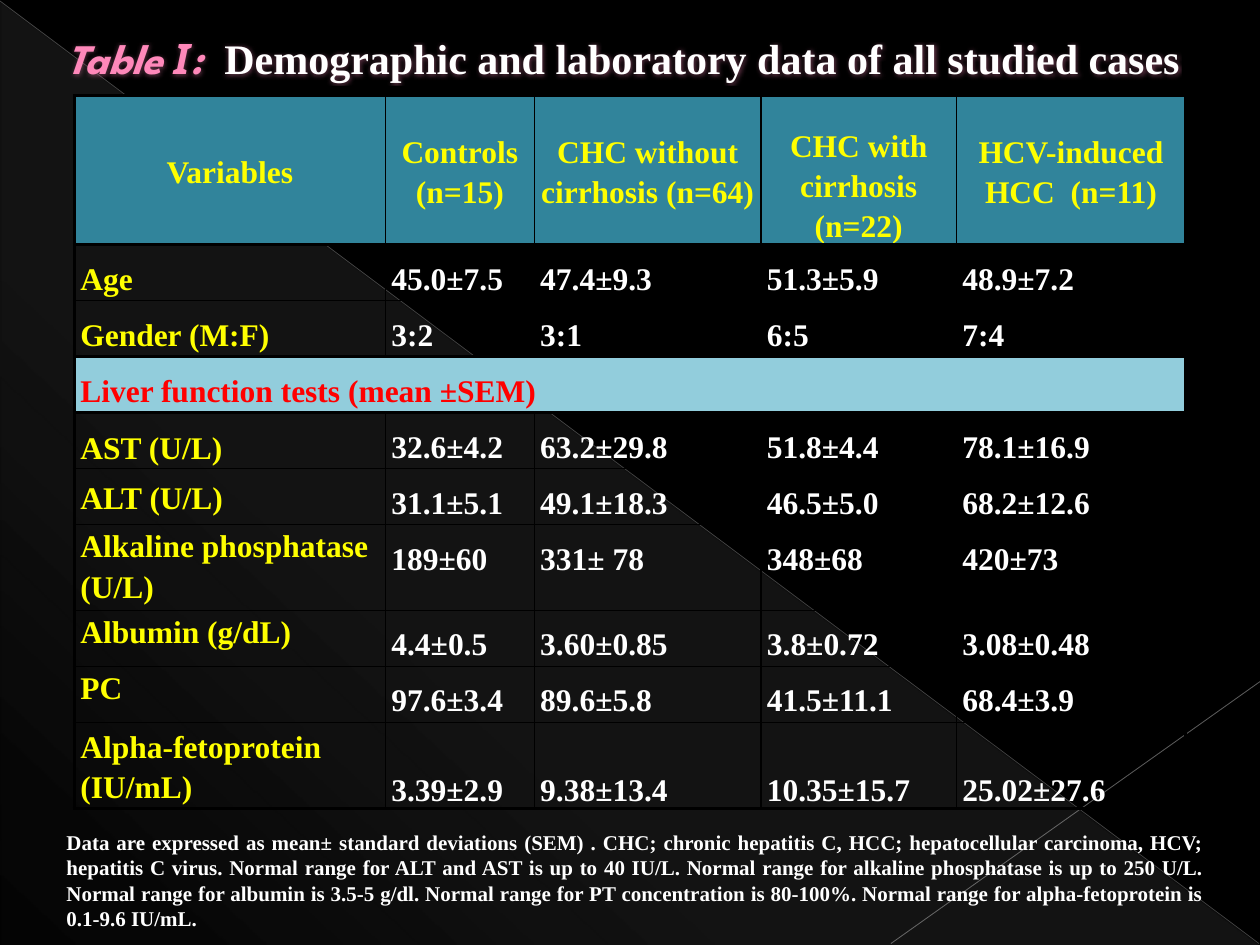
from dataclasses import dataclass

from lxml import etree
from pptx import Presentation
from pptx.dml.color import RGBColor
from pptx.enum.shapes import MSO_CONNECTOR, MSO_SHAPE
from pptx.enum.text import MSO_ANCHOR, MSO_AUTO_SIZE, PP_ALIGN
from pptx.oxml import parse_xml
from pptx.oxml.ns import nsdecls, qn
from pptx.util import Cm, Pt

TOP, MIDDLE, BOTTOM = MSO_ANCHOR.TOP, MSO_ANCHOR.MIDDLE, MSO_ANCHOR.BOTTOM
LEFT, CENTER, JUSTIFY = PP_ALIGN.LEFT, PP_ALIGN.CENTER, PP_ALIGN.JUSTIFY


@dataclass(frozen=True)
class Theme:
    background: str = "000000"
    triangle: str = "D2D2D2"
    diagonal: str = "BFBFBF"
    corner_line: str = "C6C6C6"
    border: str = "000000"
    header_fill: str = "31849B"
    section_fill: str = "92CDDC"
    label: str = "FFFF00"
    value: str = "FFFFFF"
    section: str = "FF0000"
    accent: str = "FF88BA"
    serif: str = "Times New Roman"
    display: str = "League Spartan"
    title_size: int = 24
    table_size: int = 18
    note_size: int = 12


@dataclass(frozen=True)
class DataRow:
    label: str
    values: tuple
    label_align: PP_ALIGN = LEFT
    label_anchor: MSO_ANCHOR = TOP
    label_spacing: float = 1.15
    value_align: PP_ALIGN = JUSTIFY
    value_anchor: MSO_ANCHOR = TOP
    height: float = 1.13


THEME = Theme()
COLUMN_WIDTHS = (6.27, 3.0, 4.57, 3.94, 4.62)
HEADER_HEIGHT = 3.0
SECTION_HEIGHT = 1.13
HEADERS = (
    ("Variables", MIDDLE),
    ("Controls\n(n=15)", MIDDLE),
    ("CHC without cirrhosis (n=64)", MIDDLE),
    ("CHC with cirrhosis\n(n=22)", BOTTOM),
    ("HCV-induced HCC  (n=11)", MIDDLE),
)
SECTION = "Liver function tests (mean ±SEM)"
DEMOGRAPHICS = (
    DataRow("Age", ("45.0±7.5", "47.4±9.3", "51.3±5.9", "48.9±7.2"), JUSTIFY, TOP, 1.5),
    DataRow("Gender (M:F)", ("3:2", "3:1", "6:5", "7:4"), JUSTIFY, TOP, 1.5),
)
LIVER_TESTS = (
    DataRow("AST (U/L)", ("32.6±4.2", "63.2±29.8", "51.8±4.4", "78.1±16.9"), LEFT, MIDDLE, 1.5),
    DataRow("ALT (U/L)", ("31.1±5.1", "49.1±18.3", "46.5±5.0", "68.2±12.6"), LEFT, MIDDLE),
    DataRow("Alkaline phosphatase (U/L)", ("189±60", "331± 78", "348±68", "420±73"), height=1.73),
    DataRow("Albumin (g/dL)", ("4.4±0.5", "3.60±0.85", "3.8±0.72", "3.08±0.48"), value_align=LEFT),
    DataRow("PC", ("97.6±3.4", "89.6±5.8", "41.5±11.1", "68.4±3.9"), value_align=LEFT),
    DataRow("Alpha-fetoprotein (IU/mL)", ("3.39±2.9", "9.38±13.4", "10.35±15.7", "25.02±27.6"),
            LEFT, MIDDLE, value_align=LEFT, value_anchor=BOTTOM, height=1.73),
)
# Border weights in points, from the first edge to the last
ROW_EDGES = (2.25, 2.25, 1, 1.5, 1.5, 1, 1, 1, 1, 1, 2.25)
COLUMN_EDGES = (2.25, 1, 1, 1, 1, 2.25)
NOTE = (
    "Data are expressed as mean± standard deviations (SEM) . CHC; chronic hepatitis C, "
    "HCC; hepatocellular carcinoma, HCV; hepatitis C virus. Normal range for ALT and AST "
    "is up to 40 IU/L. Normal range for alkaline phosphatase is up to 250 U/L. Normal range "
    "for albumin is 3.5-5 g/dl. Normal range for PT concentration is 80-100%. Normal range "
    "for alpha-fetoprotein is 0.1-9.6 IU/mL."
)


def style_font(font, size, color, name=THEME.serif, italic=False):
    font.size, font.bold, font.italic, font.name = Pt(size), True, italic, name
    font.color.rgb = RGBColor.from_string(color)


def color_xml(color, alpha=100):
    return f'<a:srgbClr val="{color}"><a:alpha val="{alpha * 1000}"/></a:srgbClr>'


def add_triangle(slide):
    triangle = slide.shapes.add_shape(
        MSO_SHAPE.RIGHT_TRIANGLE, Cm(0.02), Cm(0.04), Cm(25.36), Cm(19.0))
    triangle.shadow.inherit = False
    triangle.line.fill.background()
    stops = "".join(
        f'<a:gs pos="{position * 1000}">{color_xml(THEME.triangle, alpha)}</a:gs>'
        for position, alpha in ((0, 10), (70, 8), (100, 1)))
    gradient = parse_xml(
        f'<a:gradFill {nsdecls("a")}><a:gsLst>{stops}</a:gsLst>'
        f'<a:lin ang="{133 * 60000}" scaled="0"/></a:gradFill>')
    triangle.element.spPr.find(qn("a:prstGeom")).addnext(gradient)


def add_line(slide, start, end, color, width, alpha):
    line = slide.shapes.add_connector(
        MSO_CONNECTOR.STRAIGHT, *(Cm(length) for length in start + end))
    line.line.width = Pt(width)
    line.line.color.rgb = RGBColor.from_string(color)
    properties = line.element.spPr
    rgb = properties.find(".//" + qn("a:srgbClr"))
    etree.SubElement(rgb, qn("a:alpha"), val=str(alpha * 1000))
    etree.SubElement(properties, qn("a:effectLst"))


def set_borders(cell, row, column, last_column):
    weights = {"L": COLUMN_EDGES[column], "R": COLUMN_EDGES[last_column + 1],
               "T": ROW_EDGES[row], "B": ROW_EDGES[row + 1]}
    properties = cell._tc.get_or_add_tcPr()
    for side, weight in weights.items():
        properties.append(parse_xml(
            f'<a:ln{side} {nsdecls("a")} w="{Pt(weight)}"><a:solidFill>'
            f'{color_xml(THEME.border)}</a:solidFill></a:ln{side}>'))


def fill_cell(table, row, column, text, color, align, anchor, spacing, fill=None, span=1):
    cell = table.cell(row, column)
    last_column = column + span - 1
    if span > 1:
        cell.merge(table.cell(row, last_column))
    cell.text = text
    cell.vertical_anchor = anchor
    cell.margin_left = cell.margin_right = Cm(0.12)
    cell.margin_top = cell.margin_bottom = 0
    for paragraph in cell.text_frame.paragraphs:
        paragraph.alignment, paragraph.line_spacing = align, spacing
        style_font(paragraph.font, THEME.table_size, color)
    set_borders(cell, row, column, last_column)
    if fill:
        cell.fill.solid()
        cell.fill.fore_color.rgb = RGBColor.from_string(fill)
    else:
        cell.fill.background()


def add_data_rows(table, first_row, data_rows):
    for row, data in enumerate(data_rows, first_row):
        table.rows[row].height = Cm(data.height)
        fill_cell(table, row, 0, data.label, THEME.label,
                  data.label_align, data.label_anchor, data.label_spacing)
        for column, value in enumerate(data.values, 1):
            fill_cell(table, row, column, value, THEME.value,
                      data.value_align, data.value_anchor, 1.5)


def add_case_table(slide):
    section_row = 1 + len(DEMOGRAPHICS)
    row_count = section_row + 1 + len(LIVER_TESTS)
    table = slide.shapes.add_table(
        row_count, len(HEADERS), Cm(1.5), Cm(1.93), Cm(sum(COLUMN_WIDTHS)), Cm(14.37)).table
    table.first_row = table.horz_banding = False
    for column, width in zip(table.columns, COLUMN_WIDTHS):
        column.width = Cm(width)
    table.rows[0].height = Cm(HEADER_HEIGHT)
    for column, (heading, anchor) in enumerate(HEADERS):
        fill_cell(table, 0, column, heading, THEME.label, CENTER, anchor, 1.15,
                  THEME.header_fill)
    add_data_rows(table, 1, DEMOGRAPHICS)
    table.rows[section_row].height = Cm(SECTION_HEIGHT)
    fill_cell(table, section_row, 0, SECTION, THEME.section, JUSTIFY, TOP, 1.5,
              THEME.section_fill, span=len(HEADERS))
    add_data_rows(table, section_row + 1, LIVER_TESTS)


def add_text_frame(slide, left, top, width, height, wrap):
    frame = slide.shapes.add_textbox(Cm(left), Cm(top), Cm(width), Cm(height)).text_frame
    frame.word_wrap = wrap
    frame.auto_size = MSO_AUTO_SIZE.SHAPE_TO_FIT_TEXT
    frame.vertical_anchor = MIDDLE
    return frame


def add_glow(run):
    run.font._element.find(qn("a:solidFill")).addnext(parse_xml(
        f'<a:effectLst {nsdecls("a")}><a:glow rad="{Pt(4)}">'
        f'{color_xml(THEME.accent, 35)}</a:glow></a:effectLst>'))


def add_title(slide):
    paragraph = add_text_frame(slide, 1.09, 0.53, 23.37, 1.27, wrap=False).paragraphs[0]
    number, subject = paragraph.add_run(), paragraph.add_run()
    number.text = "Table І:  "
    subject.text = "Demographic and laboratory data of all studied cases"
    style_font(number.font, THEME.title_size, THEME.accent, THEME.display, italic=True)
    style_font(subject.font, THEME.title_size, THEME.value)
    for run in (number, subject):
        add_glow(run)
    number.font._element.insert(0, parse_xml(
        f'<a:ln {nsdecls("a")} w="{Pt(1.42)}"><a:solidFill>'
        f'{color_xml(THEME.accent)}</a:solidFill></a:ln>'))


def add_note(slide):
    paragraph = add_text_frame(slide, 1.09, 16.59, 23.44, 2.31, wrap=True).paragraphs[0]
    paragraph.text = NOTE
    paragraph.alignment = JUSTIFY
    style_font(paragraph.font, THEME.note_size, THEME.value)


def main():
    presentation = Presentation()
    presentation.slide_width, presentation.slide_height = Cm(25.4), Cm(19.05)
    slide = presentation.slides.add_slide(presentation.slide_layouts[6])
    slide.background.fill.solid()
    slide.background.fill.fore_color.rgb = RGBColor.from_string(THEME.background)
    add_triangle(slide)
    add_line(slide, (0, 0.02), (25.38, 19.02), THEME.diagonal, 0.39, 35)
    add_line(slide, (25.4, 13.74), (17.96, 19.02), THEME.corner_line, 0.47, 45)
    add_case_table(slide)
    add_title(slide)
    add_note(slide)
    presentation.save("out.pptx")


if __name__ == "__main__":
    main()
